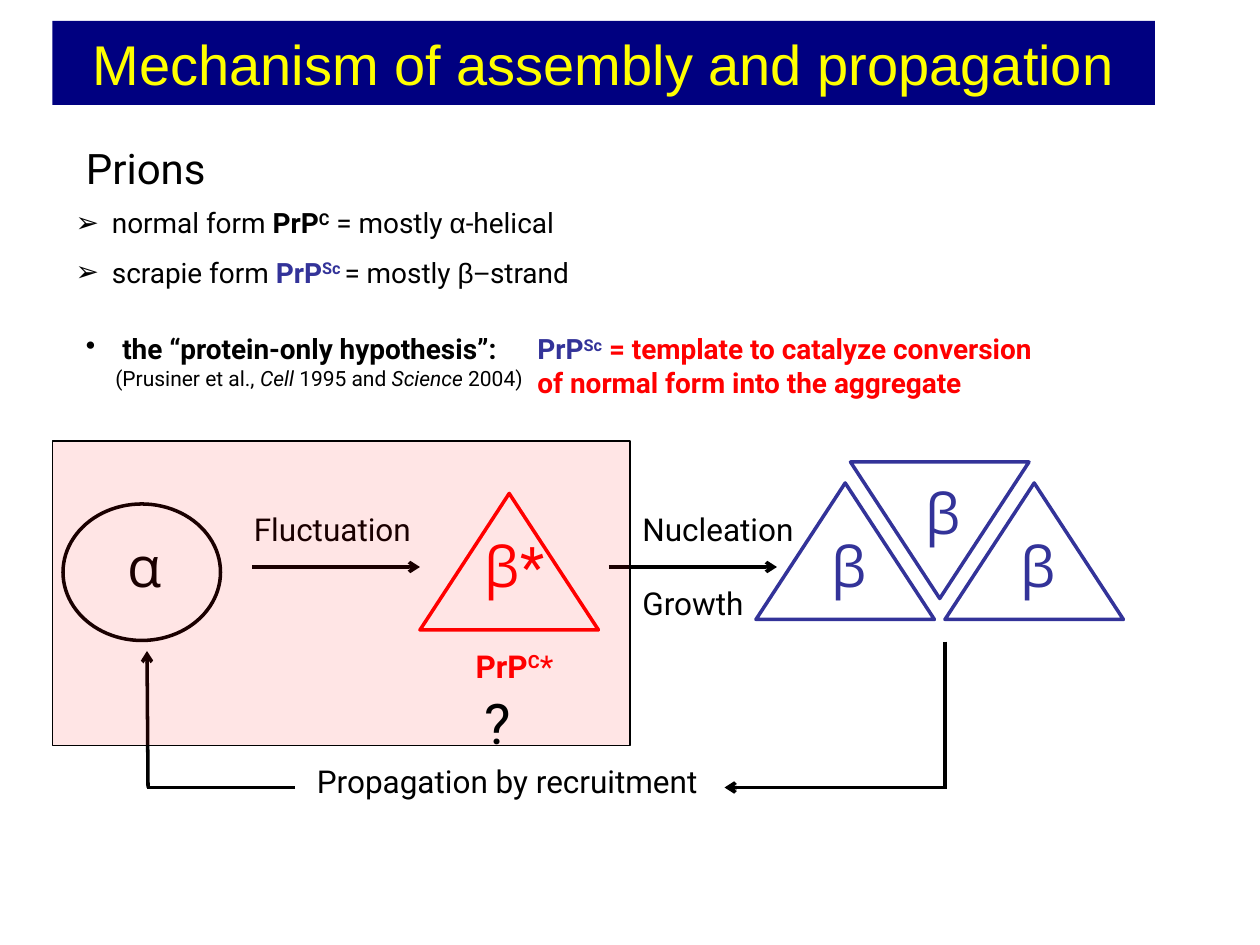
import lxml.etree
import pptx
import pptx.dml.color
import pptx.enum.shapes
import pptx.enum.text
import pptx.oxml.ns
import pptx.util

RGBColor = pptx.dml.color.RGBColor
Shape = pptx.enum.shapes.MSO_SHAPE
Align = pptx.enum.text.PP_ALIGN
qn = pptx.oxml.ns.qn

NAVY = RGBColor(0x00, 0x00, 0x80)
YELLOW = RGBColor(0xFF, 0xFF, 0x00)
BLACK = RGBColor(0x00, 0x00, 0x00)
RED = RGBColor(0xFF, 0x00, 0x00)
INDIGO = RGBColor(0x33, 0x33, 0x99)

PX = 7620  # EMU per px, 120 px to the inch
HANGING = 28
TRIANGLE_SIZE = (170, 130)
GLYPH_SIZE = (50, 76)


def px(*lengths):
    return [pptx.util.Emu(length * PX) for length in lengths]


class SlideBuilder:
    font_name = "Roboto"
    symbol_font = "Open Sans"
    line_width = 2

    def __init__(self, slide):
        self.slide = slide

    def place(self, shape, left, top, width, height):
        shape.left, shape.top, shape.width, shape.height = px(left, top, width, height)

    def style(self, font, size=None, color=None, name=None, bold=None, italic=None):
        if size:
            font.size = pptx.util.Pt(size)
        if color is not None:
            font.color.rgb = color
        if name:
            font.name = name
        if bold is not None:
            font.bold = bold
        if italic is not None:
            font.italic = italic

    def add_runs(self, paragraph, runs, size, color=BLACK, name=None, bold=None):
        """Runs are plain strings or (text, overrides) pairs; "raised" makes a superscript."""
        self.style(paragraph.font, size, color, name or self.font_name, bold)
        for item in runs:
            content, overrides = (item, {}) if isinstance(item, str) else item
            overrides = dict(overrides)
            raised = overrides.pop("raised", False)
            run = paragraph.add_run()
            run.text = content
            self.style(run.font, **overrides)
            if raised:
                run._r.get_or_add_rPr().set("baseline", "30000")

    def bullet(self, paragraph, character):
        properties = paragraph._p.get_or_add_pPr()
        properties.set("marL", str(HANGING * PX))
        properties.set("indent", str(-HANGING * PX))
        mark = lxml.etree.Element(qn("a:buChar"), char=character)
        defaults = properties.find(qn("a:defRPr"))
        defaults.addprevious(mark)

    def title(self, text, *box):
        shape = self.slide.shapes.title
        self.place(shape, *box)
        shape.fill.solid()
        shape.fill.fore_color.rgb = NAVY
        paragraph = shape.text_frame.paragraphs[0]
        paragraph.alignment = Align.CENTER
        self.add_runs(paragraph, [text], 32, YELLOW, "Arial")

    def body_list(self, items, character, size, *box):
        shape = self.slide.placeholders[1]
        self.place(shape, *box)
        frame = shape.text_frame
        frame.auto_size = pptx.enum.text.MSO_AUTO_SIZE.NONE
        for index, runs in enumerate(items):
            paragraph = frame.add_paragraph() if index else frame.paragraphs[0]
            paragraph.space_before = pptx.util.Pt(9 if index else 0)
            self.add_runs(paragraph, runs, size)
            self.bullet(paragraph, character)

    def text(self, runs, size, *box, color=BLACK, name=None, bold=None,
             align=Align.LEFT, bullet=None):
        frame = self.slide.shapes.add_textbox(*px(*box)).text_frame
        frame.word_wrap = True
        paragraph = frame.paragraphs[0]
        paragraph.alignment = align
        self.add_runs(paragraph, runs, size, color, name, bold)
        if bullet:
            self.bullet(paragraph, bullet)

    def glyph(self, character, left, top, color):
        self.text([character], 32, left, top, *GLYPH_SIZE, color=color, name=self.symbol_font)

    def outline(self, kind, color, *box, width=line_width, rotation=0):
        shape = self.slide.shapes.add_shape(kind, *px(*box))
        shape.shadow.inherit = False
        shape.rotation = rotation
        shape.fill.background()
        shape.line.color.rgb = color
        shape.line.width = pptx.util.Pt(width)
        return shape

    def tinted_panel(self, color, percent, *box):
        shape = self.outline(Shape.RECTANGLE, BLACK, *box, width=0.75)
        shape.fill.solid()
        shape.fill.fore_color.rgb = color
        fill_color = shape._element.spPr.find(qn("a:solidFill"))[0]
        lxml.etree.SubElement(fill_color, qn("a:alpha"), val=str(percent * 1000))

    def line(self, *ends, arrow=False):
        connector = self.slide.shapes.add_connector(
            pptx.enum.shapes.MSO_CONNECTOR.STRAIGHT, *px(*ends))
        connector.line.color.rgb = BLACK
        connector.line.width = pptx.util.Pt(self.line_width)
        if arrow:
            lxml.etree.SubElement(connector.line._get_or_add_ln(), qn("a:tailEnd"), type="arrow")
        lxml.etree.SubElement(connector._element.spPr, qn("a:effectLst"))


def main():
    presentation = pptx.Presentation()
    presentation.slide_width, presentation.slide_height = px(1200, 900)
    builder = SlideBuilder(presentation.slides.add_slide(presentation.slide_layouts[1]))

    bold = {"bold": True}
    raised = {"bold": True, "raised": True}
    scrapie = {"bold": True, "color": INDIGO}
    scrapie_raised = {**scrapie, "raised": True}
    greek = {"name": "Arial"}

    builder.title("Mechanism of assembly and propagation", 50, 20, 1050, 80)
    builder.text(["Prions"], 24, 70, 130, 390, 60)
    builder.body_list([
        [" normal form ", ("PrP", bold), ("C", raised), " = mostly ", ("α", greek), "-helical"],
        [" scrapie form ", ("PrP", scrapie), ("Sc ", scrapie_raised), "= mostly ",
         ("β−", greek), "strand"],
    ], "➢", 16, 60, 190, 610, 92)

    citation = {"size": 12}
    journal = {"size": 12, "italic": True}
    builder.text([
        (" the “protein-only hypothesis”: ", bold), ("(Prusiner et al., ", citation),
        ("Cell", journal), (" 1995 and ", citation), ("Science", journal), (" 2004)", citation),
    ], 16, 70, 310, 440, 68, bullet="•")
    builder.text([
        ("PrP", {"color": INDIGO}), ("Sc", {"color": INDIGO, "raised": True}),
        " = template to catalyze conversion of normal form into the aggregate",
    ], 16, 500, 310, 510, 108, color=RED, bold=True)

    # Fluctuating monomer
    builder.outline(Shape.OVAL, BLACK, 60, 480, 150, 130)
    builder.glyph("α", 110, 500, BLACK)
    builder.outline(Shape.ISOSCELES_TRIANGLE, RED, 400, 470, *TRIANGLE_SIZE)
    builder.text([("β", {"name": builder.symbol_font}), "*"], 32, 450, 500, 90, 76, color=RED)

    # Aggregate
    for left, top, rotation, glyph_left, glyph_top in (
            (720, 460, 0, 780, 500), (900, 460, 0, 960, 500), (810, 440, 180, 870, 450)):
        builder.outline(Shape.ISOSCELES_TRIANGLE, INDIGO, left, top, *TRIANGLE_SIZE,
                        rotation=rotation)
        builder.glyph("β", glyph_left, glyph_top, INDIGO)

    # Forward steps, then the way back by recruitment
    for ends, arrow in (
            ((240, 540, 400, 540), True), ((580, 540, 740, 540), True),
            ((900, 611, 900, 751), False), ((900, 750, 690, 750), True),
            ((281, 750, 140, 750), False), ((141, 750, 140, 620), True)):
        builder.line(*ends, arrow=arrow)
    for label, left, top, width in (
            ("Fluctuation", 230, 480, 200), ("Nucleation", 600, 480, 200),
            ("Growth", 600, 550, 150), ("Propagation by recruitment", 290, 720, 400)):
        builder.text([label], 18, left, top, width, 48)

    builder.tinted_panel(RED, 10, 50, 420, 550, 290)
    builder.text(["?"], 32, 450, 650, *GLYPH_SIZE)
    builder.text([("PrP", bold), ("C", raised), "*"], 18, 410, 610, 160, 48,
                 color=RED, align=Align.CENTER)

    presentation.save("out.pptx")


if __name__ == "__main__":
    main()
